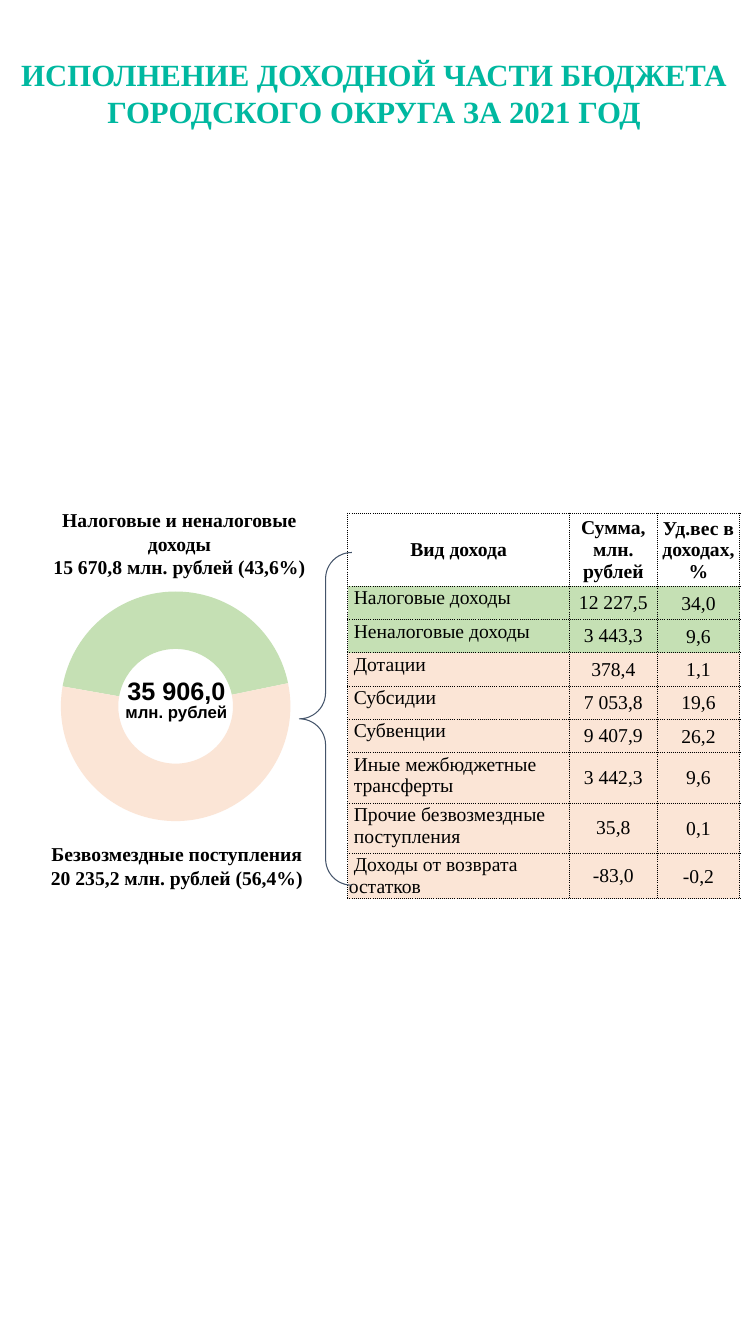
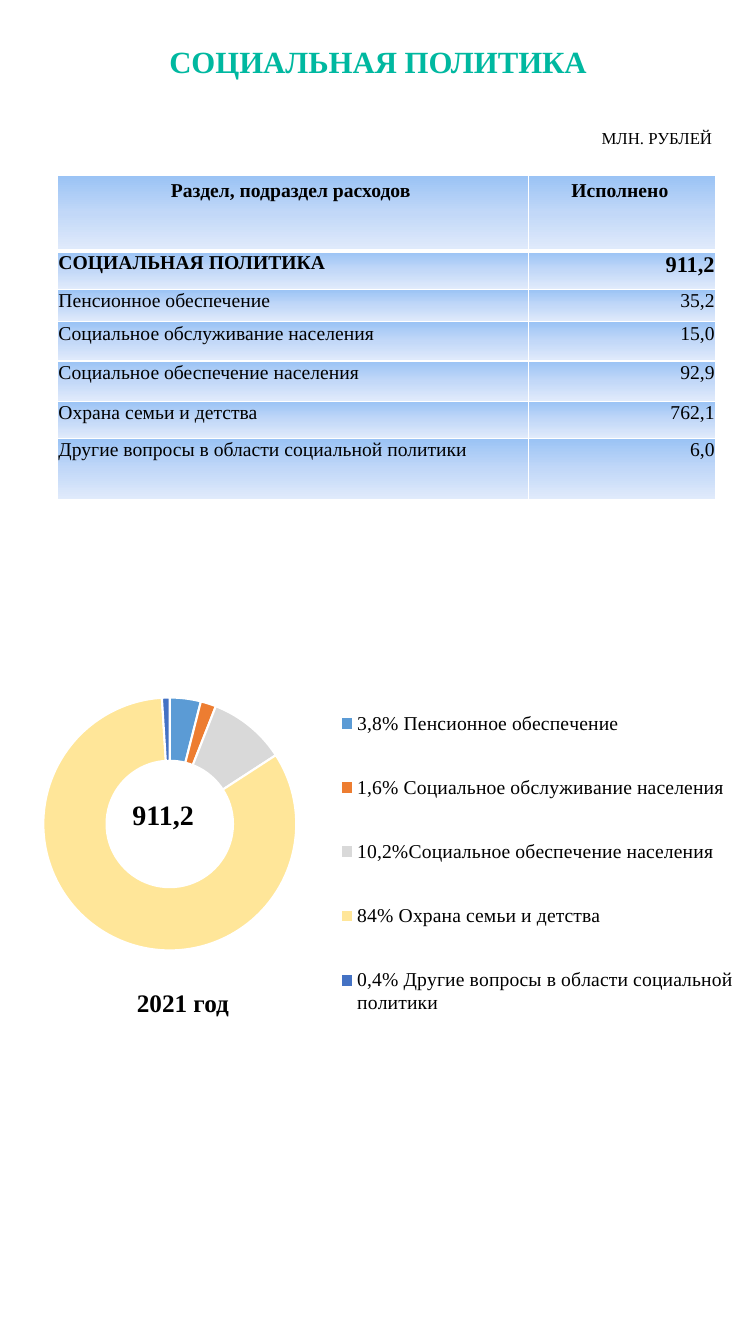
"""Build two budget slides: revenue execution and social policy spending."""
import pptx
import pptx.chart.data
import pptx.dml.color
import pptx.enum.chart
import pptx.enum.shapes
import pptx.enum.text
import pptx.oxml
import pptx.oxml.ns
import pptx.util

ALIGN = pptx.enum.text.PP_ALIGN
ANCHOR = pptx.enum.text.MSO_ANCHOR
inch = pptx.util.Inches
qn = pptx.oxml.ns.qn

WIDTH, HEIGHT = 7.5, 13.33
SERIF, SANS, CHART_FONT = "Times New Roman", "Arial", "Calibri"
COLORS = {
    "title": "00B8A0", "text": "000000", "white": "FFFFFF", "brace": "44546A",
    "tax": "C5E0B4", "grants": "FBE5D6",
    "pensions": "5B9BD5", "services": "ED7D31", "support": "D9D9D9",
    "family": "FFE699", "other": "4472C4",
}
GRADIENT = [(0, "9AC3F5"), (50, "C2D8F8"), (100, "E1EBFB")]
TIGHT = (0.01, 0.01, 0.01, 0.01)
FLUSH = (0.01, 0.01, 0.01, 0)
SNUG = (0.07, 0.04, 0.07, 0.04)
PLAIN = (0.1, 0.05, 0.1, 0.05)
HEADING = (0.1, 0.05, 0.14, 0.05)
LABEL_INDENT = 0.05

REVENUE_TITLE = ["ИСПОЛНЕНИЕ ДОХОДНОЙ ЧАСТИ БЮДЖЕТА", "ГОРОДСКОГО ОКРУГА ЗА 2021 ГОД"]
REVENUE_HEAD = ("Вид дохода", "Сумма, млн.\nрублей", "Уд.вес в доходах, %")
REVENUES = [
    ("tax", 0.33, ("Налоговые доходы", "12 227,5", "34,0")),
    ("tax", 0.33, ("Неналоговые доходы", "3 443,3", "9,6")),
    ("grants", 0.33, ("Дотации", "378,4", "1,1")),
    ("grants", 0.33, ("Субсидии", "7 053,8", "19,6")),
    ("grants", 0.33, ("Субвенции", "9 407,9", "26,2")),
    ("grants", 0.5, ("Иные межбюджетные\nтрансферты", "3 442,3", "9,6")),
    ("grants", 0.5, ("Прочие безвозмездные\nпоступления", "35,8", "0,1")),
    ("grants", 0.33, ("Доходы от возврата остатков", "-83,0", "-0,2")),
]
REVENUE_SHARES = [("1", 44, "tax"), ("2", 56, "grants")]
TAX_CAPTION = ["Налоговые и неналоговые доходы", "15 670,8 млн. рублей (43,6%)"]
GRANTS_CAPTION = ["Безвозмездные поступления", "20 235,2 млн. рублей (56,4%)"]

SOCIAL_TITLE = ["СОЦИАЛЬНАЯ ПОЛИТИКА"]
SOCIAL_HEAD = ("Раздел, подраздел расходов", "Исполнено")
SOCIAL_TOTAL = ("СОЦИАЛЬНАЯ ПОЛИТИКА", "911,2")
EXPENSES = [
    (0.32, ("Пенсионное обеспечение", "35,2")),
    (0.39, ("Социальное обслуживание населения", "15,0")),
    (0.4, ("Социальное обеспечение населения", "92,9")),
    (0.37, ("Охрана семьи и детства", "762,1")),
    (0.61, ("Другие вопросы в области социальной политики", "6,0")),
]
EXPENSE_SHARES = [
    ("3,8% Пенсионное обеспечение", 4, "pensions"),
    ("1,6% Социальное обслуживание населения", 2, "services"),
    ("10,2%Социальное обеспечение населения", 10, "support"),
    ("84% Охрана семьи и детства", 84, "family"),
    ("0,4% Другие вопросы в области социальной политики", 1, "other"),
]


def rgb(name):
    return pptx.dml.color.RGBColor.from_string(COLORS[name])


def element(tag, **attributes):
    node = pptx.oxml.parse_xml(
        f'<{tag} xmlns:a="{pptx.oxml.ns.nsuri("a")}" xmlns:c="{pptx.oxml.ns.nsuri("c")}"/>')
    for key, value in attributes.items():
        node.set(key, str(value))
    return node


def nest(parent, tag, **attributes):
    child = element(tag, **attributes)
    parent.append(child)
    return child


def style_font(font, size, bold=False, color="text", face=SERIF):
    font.name, font.size, font.bold = face, pptx.util.Pt(size), bold
    font.color.rgb = rgb(color)


def write(frame, lines, sizes, bold=False, color="text", face=SERIF,
          align=ALIGN.CENTER, spacing=1.0, indent=0):
    for number, line in enumerate(lines):
        paragraph = frame.paragraphs[0] if number == 0 else frame.add_paragraph()
        paragraph.alignment, paragraph.line_spacing = align, spacing
        if indent:
            paragraph._p.get_or_add_pPr().set("indent", str(inch(indent)))
        run = paragraph.add_run()
        run.text = line
        style_font(run.font, sizes[min(number, len(sizes) - 1)], bold, color, face)


def set_margins(target, margins):
    (target.margin_left, target.margin_top,
     target.margin_right, target.margin_bottom) = map(inch, margins)


def add_text(slide, box, lines, sizes, margins=PLAIN, anchor=ANCHOR.TOP, **style):
    frame = slide.shapes.add_textbox(*map(inch, box)).text_frame
    frame.word_wrap, frame.vertical_anchor = True, anchor
    set_margins(frame, margins)
    write(frame, lines, sizes, **style)


def add_titled_slide(deck, lines, box, anchor):
    slide = deck.slides.add_slide(deck.slide_layouts[5])
    title = slide.shapes.title
    title.left, title.top, title.width, title.height = map(inch, box)
    frame = title.text_frame
    frame.auto_size = pptx.enum.text.MSO_AUTO_SIZE.NONE
    frame.word_wrap, frame.vertical_anchor = True, anchor
    set_margins(frame, PLAIN)
    write(frame, lines, [22], bold=True, color="title")
    return slide


def set_borders(cell, color, widths, dash):
    properties = cell._tc.get_or_add_tcPr()
    for place, side in enumerate(("L", "R", "T", "B")):
        line = element(f"a:ln{side}", w=pptx.util.Pt(widths[place]))
        nest(nest(line, "a:solidFill"), "a:srgbClr", val=COLORS[color])
        nest(line, "a:prstDash", val=dash)
        properties.insert(place, line)


def fill_gradient(cell):
    gradient = nest(cell._tc.get_or_add_tcPr(), "a:gradFill", rotWithShape=1)
    stops = nest(gradient, "a:gsLst")
    for position, color in GRADIENT:
        nest(nest(stops, "a:gs", pos=position * 1000), "a:srgbClr", val=color)
    nest(gradient, "a:lin", ang=90 * 60000, scaled=0)


def add_grid(slide, left, top, columns, heights):
    table = slide.shapes.add_table(len(heights), len(columns), *map(
        inch, (left, top, sum(columns), sum(heights)))).table
    table.first_row = table.horz_banding = False
    for column, width in zip(table.columns, columns):
        column.width = inch(width)
    for row, height in zip(table.rows, heights):
        row.height = inch(height)
    return table


def add_doughnut(slide, box, shares, hole, start, plot_box):
    data = pptx.chart.data.CategoryChartData()
    data.categories = [label for label, _, _ in shares]
    data.add_series("Series 1", [value for _, value, _ in shares])
    chart = slide.shapes.add_chart(
        pptx.enum.chart.XL_CHART_TYPE.DOUGHNUT, *map(inch, box), data).chart
    chart.has_title = chart.has_legend = False
    style_font(chart.font, 10, face=CHART_FONT)
    plot = chart.plots[0]
    plot.vary_by_categories = True
    space = chart._chartSpace
    for tag, value in (("firstSliceAng", start), ("holeSize", hole)):
        for node in space.iter(qn(f"c:{tag}")):
            node.set("val", str(value))
    area = space.find(".//" + qn("c:plotArea"))
    for old in area.findall(qn("c:layout")):
        area.remove(old)
    area.insert(0, manual_layout(plot_box, inner=True))
    backdrop = element("c:spPr")
    nest(backdrop, "a:noFill")
    nest(nest(backdrop, "a:ln"), "a:noFill")
    space.find(qn("c:chart")).addnext(backdrop)
    for place, (_, _, color) in enumerate(shares):
        look = plot.series[0].points[place].format
        look.fill.solid()
        look.fill.fore_color.rgb = rgb(color)
        look.line.fill.background()
    return chart


def manual_layout(box, inner=False):
    layout = element("c:layout")
    manual = nest(layout, "c:manualLayout")
    if inner:
        nest(manual, "c:layoutTarget", val="inner")
    for axis in "xy":
        nest(manual, f"c:{axis}Mode", val="edge")
    for tag, value in zip("xywh", box):
        nest(manual, f"c:{tag}", val=value)
    return layout


def build_revenue(deck):
    slide = add_titled_slide(deck, REVENUE_TITLE, (0, 0.5, WIDTH - 0.08, 1.02), ANCHOR.TOP)
    add_doughnut(slide, (0.23, 5.67, 3.4, 2.52), REVENUE_SHARES, 58, 280,
                 (0.11, 0.07, 0.67, 0.94))
    rows = [(None, 0.67, REVENUE_HEAD)] + REVENUES
    table = add_grid(slide, 3.45, 5.09, (2.2, 0.87, 0.82), [height for _, height, _ in rows])
    for r, (color, _, texts) in enumerate(rows):
        for c, text in enumerate(texts):
            cell = table.cell(r, c)
            is_label = color is not None and c == 0
            set_margins(cell, (TIGHT, SNUG, FLUSH)[c])
            cell.vertical_anchor = ANCHOR.TOP if is_label else ANCHOR.MIDDLE
            write(cell.text_frame, text.split("\n"), [14], bold=color is None,
                  align=ALIGN.LEFT if is_label else ALIGN.CENTER,
                  indent=LABEL_INDENT if is_label else 0)
            if color:
                cell.fill.solid()
                cell.fill.fore_color.rgb = rgb(color)
            else:
                cell.fill.background()
            set_borders(cell, "text", [0.75] * 4, "sysDot")
    brace = slide.shapes.add_shape(pptx.enum.shapes.MSO_SHAPE.LEFT_BRACE,
                                   *map(inch, (2.97, 5.48, 0.52, 3.3)))
    brace.adjustments[0] = brace.adjustments[1] = 0.5
    brace.shadow.inherit = False
    brace.fill.background()
    brace.line.color.rgb = rgb("brace")
    brace.line.width = pptx.util.Pt(0.75)
    for box, caption in (((0.22, 4.97, 3.12, 0.86), TAX_CAPTION),
                         ((0.36, 8.28, 2.79, 0.62), GRANTS_CAPTION)):
        add_text(slide, box, caption, [14], (0.07,) * 4, bold=True)
    add_text(slide, (1.04, 6.66, 1.42, 0.61), ["35 906,0", "млн. рублей"], [18, 12],
             (0.1,) * 4, bold=True, face=SANS, spacing=0.8)


def build_social(deck):
    slide = add_titled_slide(deck, SOCIAL_TITLE, (0, 0.36, WIDTH, 0.5), ANCHOR.MIDDLE)
    chart = add_doughnut(slide, (0.19, 6.61, 7.29, 3.86), EXPENSE_SHARES, 75, 0,
                         (0.03, 0.08, 0.35, 0.65))
    for place in range(len(EXPENSE_SHARES)):
        edge = chart.plots[0].series[0].points[place].format.line
        edge.color.rgb = rgb("white")
        edge.width = pptx.util.Pt(1.5)
    chart.has_legend = True
    legend = chart.legend
    legend.position = pptx.enum.chart.XL_LEGEND_POSITION.RIGHT
    legend.include_in_layout = False
    style_font(legend.font, 14)
    legend._element.find(qn("c:overlay")).addprevious(manual_layout((0.42, 0.01, 0.57, 0.99)))

    rows = [(0.75, SOCIAL_HEAD), (0.38, SOCIAL_TOTAL)] + EXPENSES
    table = add_grid(slide, 0.57, 1.74, (4.67, 1.86), [height for height, _ in rows])
    for r, (_, texts) in enumerate(rows):
        for c, text in enumerate(texts):
            cell = table.cell(r, c)
            set_margins(cell, FLUSH if r else HEADING)
            write(cell.text_frame, [text], [16 if (r, c) == (1, 1) else 14], bold=r < 2,
                  align=(ALIGN.LEFT, ALIGN.RIGHT)[c] if r else ALIGN.CENTER)
            fill_gradient(cell)
            set_borders(cell, "white", (1, 1, 3 if r == 1 else 1, 1 if r else 3), "solid")
    add_text(slide, (0.97, 7.8, 1.3, 0.55), [SOCIAL_TOTAL[1]], [20],
             anchor=ANCHOR.MIDDLE, bold=True)
    add_text(slide, (1.26, 9.74, 1.3, 0.45), ["2021 год"], [18], bold=True, align=ALIGN.LEFT)
    add_text(slide, (5.87, 1.22, 1.5, 0.3), ["МЛН. РУБЛЕЙ"], [12], align=ALIGN.LEFT)


def main():
    deck = pptx.Presentation()
    deck.slide_width, deck.slide_height = inch(WIDTH), inch(HEIGHT)
    build_revenue(deck)
    build_social(deck)
    deck.save("out.pptx")


if __name__ == "__main__":
    main()
